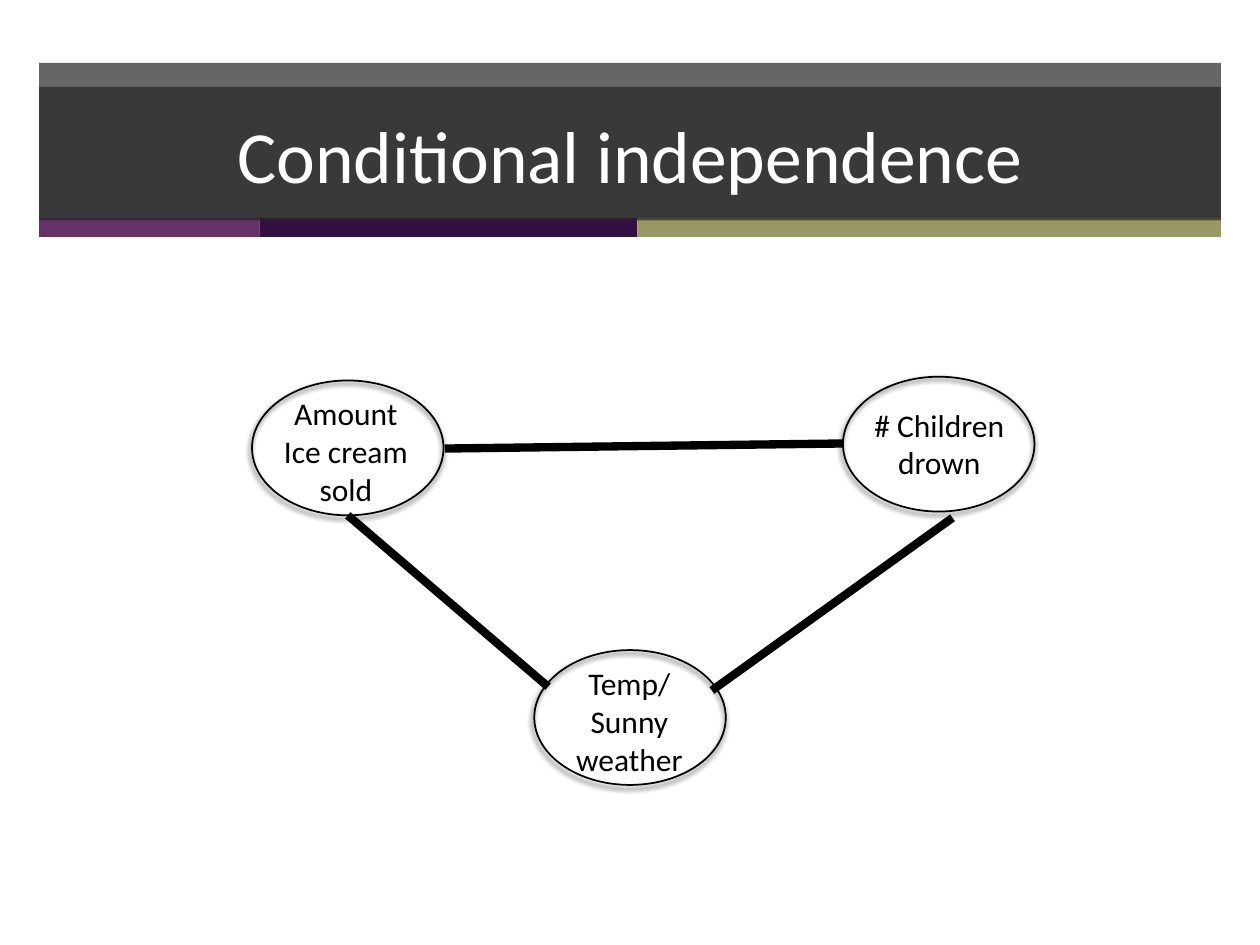
from lxml import etree
from pptx import Presentation
from pptx.dml.color import RGBColor
from pptx.enum.shapes import MSO_CONNECTOR, MSO_SHAPE
from pptx.enum.text import MSO_ANCHOR, MSO_AUTO_SIZE, PP_ALIGN
from pptx.oxml.ns import qn
from pptx.util import Inches, Pt

RECT, OVAL = MSO_SHAPE.RECTANGLE, MSO_SHAPE.OVAL
STRAIGHT = MSO_CONNECTOR.STRAIGHT
CENTER = PP_ALIGN.CENTER

FONT = "Calibri"
COLORS = {"band": "262626", "purple": "663366", "violet": "330F42",
          "olive": "999966", "black": "000000", "white": "FFFFFF"}

TITLE = "Conditional independence"
TITLE_BOX = (0.31, 0.69, 9.38, 1.06)
BAND_BOX = (0.31, 0.5, 9.38, 1.24)
STRIPE_LEFT, STRIPE_TOP, STRIPE_HEIGHT = 0.31, 1.73, 0.15
STRIPES = [("purple", 1.75), ("violet", 3), ("olive", 4.63)]

NODE_SIZE = (1.52, 1.07)
# Ellipse corner, label box, label paragraphs
NODES = [
    ((2, 3.02), (2.14, 3.08, 1.21, 1.01), ["Amount Ice cream sold"]),
    ((6.69, 2.99), (6.77, 3.17, 1.37, 0.71), ["# Children drown"]),
    ((4.24, 5.16), (4.39, 5.22, 1.21, 1.01), ["Temp/", "Sunny weather"]),
]
EDGES = [
    ((3.53, 3.56), (6.69, 3.52)),
    ((2.76, 4.09), (4.35, 5.45)),
    ((5.65, 5.48), (7.56, 4.11)),
]


def rgb(name):
    return RGBColor.from_string(COLORS[name])


def inches(values):
    return [Inches(v) for v in values]


def fill_shape(shape, color, alpha=None):
    shape.fill.solid()
    shape.fill.fore_color.rgb = rgb(color)
    if alpha is not None:
        clr = shape.fill._xPr.find(qn("a:solidFill"))[0]
        etree.SubElement(clr, qn("a:alpha"), val=str(alpha * 1000))


def add_bar(s, box, color, alpha=None):
    bar = s.shapes.add_shape(RECT, *inches(box))
    bar.shadow.inherit = False
    bar.line.fill.background()
    fill_shape(bar, color, alpha)


def add_outer_shadow(shape, blur=3, dist=2, angle=110, alpha=75):
    shape.shadow.inherit = False
    effects = shape._element.spPr.find(qn("a:effectLst"))
    outer = etree.SubElement(
        effects, qn("a:outerShdw"), blurRad=str(Pt(blur)), dist=str(Pt(dist)),
        dir=str(angle * 60000), rotWithShape="0")
    clr = etree.SubElement(outer, qn("a:srgbClr"), val=COLORS["black"])
    etree.SubElement(clr, qn("a:alpha"), val=str(alpha * 1000))


def write(tf, lines, size, color):
    tf.word_wrap = True
    tf.text = "\n".join(lines)
    for p in tf.paragraphs:
        p.alignment = CENTER
        p.font.name = FONT
        p.font.size = Pt(size)
        p.font.color.rgb = rgb(color)


def add_node(s, corner, label_box, lines):
    oval = s.shapes.add_shape(OVAL, *inches(corner + NODE_SIZE))
    oval.fill.background()
    oval.line.color.rgb = rgb("black")
    oval.line.width = Pt(1)
    add_outer_shadow(oval)
    label = s.shapes.add_textbox(*inches(label_box))
    write(label.text_frame, lines, 18, "black")
    label.text_frame.auto_size = MSO_AUTO_SIZE.SHAPE_TO_FIT_TEXT


def add_edge(s, start, end):
    line = s.shapes.add_connector(STRAIGHT, *inches(start + end))
    line.line.color.rgb = rgb("black")
    line.line.width = Pt(4.75)
    etree.SubElement(line._element.spPr, qn("a:effectLst"))


def add_header(s):
    add_bar(s, BAND_BOX, "band", 70)
    left = STRIPE_LEFT
    for color, width in STRIPES:
        add_bar(s, (left, STRIPE_TOP, width, STRIPE_HEIGHT), color)
        left += width

    title = s.shapes.title
    title.left, title.top, title.width, title.height = inches(TITLE_BOX)
    fill_shape(title, "band", 70)
    write(title.text_frame, [TITLE], 42, "white")
    title.text_frame.vertical_anchor = MSO_ANCHOR.MIDDLE
    title.text_frame.auto_size = MSO_AUTO_SIZE.NONE
    s.shapes._spTree.append(title._element)  # bring in front of the bars


def main():
    prs = Presentation()
    prs.slide_width, prs.slide_height = Inches(10), Inches(7.5)
    s = prs.slides.add_slide(prs.slide_layouts[5])
    add_header(s)
    for node in NODES:
        add_node(s, *node)
    for edge in EDGES:
        add_edge(s, *edge)
    prs.save("out.pptx")


if __name__ == "__main__":
    main()
